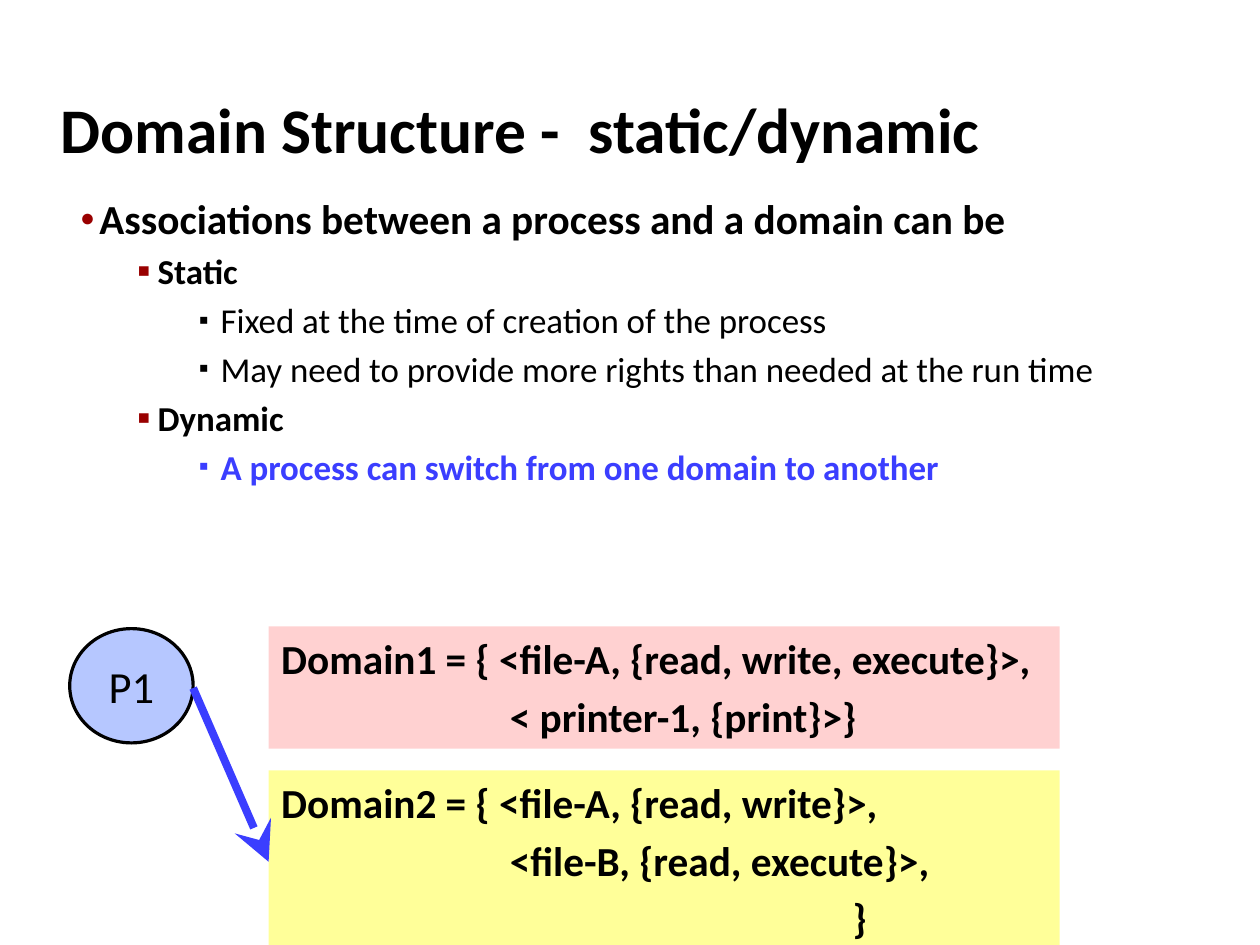
from lxml import etree
from pptx import Presentation
from pptx import util as u
from pptx.dml.color import RGBColor
from pptx.enum import shapes, text
from pptx.oxml.ns import qn

FONT = "Calibri"
COLORS = {
    "text": "000000", "accent": "3B3EFF", "bullet": "990000",
    "process": "B6C7FF", "domain1": "FF0000", "domain2": "FFFF00",
}
TITLE = "Domain Structure -  static/dynamic"
# level, text, bold, colour
OUTLINE = [
    (0, "Associations between a process and a domain can be", True, "text"),
    (1, "Static", True, "text"),
    (2, "Fixed at the time of creation of the process", False, "text"),
    (2, "May need to provide more rights than needed at the run time", False, "text"),
    (1, "Dynamic", True, "text"),
    (2, "A process can switch from one domain to another", True, "accent"),
]
# size, left margin, hanging indent, bullet, bullet colour, bullet percent
LEVELS = [
    (26, 0.29, 0.17, "●", "bullet", 60),
    (22, 0.8, 0.18, "▪", "bullet", 110),
    (22, 1.35, 0.19, "▪", "text", 80),
]
# colour, opacity percent, top, height, lines
DOMAINS = [
    ("domain1", 18, 5.48, 1.07, [
        "Domain1 = { <file-A, {read, write, execute}>,",
        "\t\t< printer-1, {print}>}"]),
    ("domain2", 40, 6.74, 1.6, [
        "Domain2 = { <file-A, {read, write}>,",
        "\t\t<file-B, {read, execute}>,",
        "\t\t\t\t\t}"]),
]
DOMAIN_LEFT, DOMAIN_WIDTH, DOMAIN_SIZE = 2.35, 6.92, 26
PROCESS_BOX = (0.61, 5.5, 1.08, 1)
ARROW_START = (1.69, 6.02)


def color(name):
    return RGBColor.from_string(COLORS[name])


def place(shape, *box):
    shape.left, shape.top, shape.width, shape.height = map(u.Inches, box)


def style(paragraph, size, bold=False, color_name="text"):
    font = paragraph.font
    font.name, font.size, font.bold = FONT, u.Pt(size), bold
    font.color.rgb = color(color_name)


def indent(paragraph, margin, hanging):
    properties = paragraph._p.get_or_add_pPr()
    properties.set("marL", str(u.Inches(margin)))
    properties.set("indent", str(-u.Inches(hanging)))
    return properties


def add_bullet(properties, character, color_name, percent):
    bullet_color = etree.SubElement(properties, qn("a:buClr"))
    etree.SubElement(bullet_color, qn("a:srgbClr"), val=COLORS[color_name])
    etree.SubElement(properties, qn("a:buSzPct"), val=str(percent * 1000))
    etree.SubElement(properties, qn("a:buChar"), char=character)


def fill_paragraphs(frame, lines):
    frame.text = "\n".join(lines)
    return frame.paragraphs


def add_title(slide):
    title = slide.shapes.title
    place(title, 0.43, 1.06, 9.15, 0.39)
    frame = title.text_frame
    frame.text = TITLE
    frame.vertical_anchor = text.MSO_ANCHOR.BOTTOM
    frame.auto_size = text.MSO_AUTO_SIZE.SHAPE_TO_FIT_TEXT
    paragraph = frame.paragraphs[0]
    paragraph.alignment = text.PP_ALIGN.LEFT
    paragraph.line_spacing = 0.42
    indent(paragraph, 0.14, 0.14)
    style(paragraph, 40, True)


def add_outline(slide):
    body = slide.placeholders[1]
    place(body, 0.48, 1.64, 9.52, 2.76)
    frame = body.text_frame
    frame.auto_size = text.MSO_AUTO_SIZE.SHAPE_TO_FIT_TEXT
    paragraphs = fill_paragraphs(frame, [row[1] for row in OUTLINE])
    for paragraph, (level, _, bold, color_name) in zip(paragraphs, OUTLINE):
        size, margin, hanging, *bullet = LEVELS[level]
        if color_name == "accent":
            bullet[1] = color_name
        paragraph.level = level
        paragraph.space_before = u.Pt(size * 0.2)
        add_bullet(indent(paragraph, margin, hanging), *bullet)
        style(paragraph, size, bold, color_name)


def add_domain(slide, color_name, opacity, top, height, lines):
    box = slide.shapes.add_shape(
        shapes.MSO_SHAPE.RECTANGLE,
        *map(u.Inches, (DOMAIN_LEFT, top, DOMAIN_WIDTH, height)))
    box.shadow.inherit = False
    box.line.fill.background()
    box.fill.solid()
    box.fill.fore_color.rgb = color(color_name)
    fill_color = box._element.spPr.find(qn("a:solidFill"))[0]
    etree.SubElement(fill_color, qn("a:alpha"), val=str(opacity * 1000))
    frame = box.text_frame
    frame.word_wrap = True
    frame.auto_size = text.MSO_AUTO_SIZE.SHAPE_TO_FIT_TEXT
    frame.vertical_anchor = text.MSO_ANCHOR.TOP
    frame.margin_left = frame.margin_right = u.Inches(0.11)
    frame.margin_top = frame.margin_bottom = u.Inches(0.06)
    for paragraph in fill_paragraphs(frame, lines):
        paragraph.alignment = text.PP_ALIGN.LEFT
        paragraph.space_before = u.Pt(DOMAIN_SIZE * 0.2)
        paragraph._p.get_or_add_pPr().set("defTabSz", str(u.Inches(1)))
        style(paragraph, DOMAIN_SIZE, True)
    return box


def add_process(slide):
    process = slide.shapes.add_shape(
        shapes.MSO_SHAPE.OVAL, *map(u.Inches, PROCESS_BOX))
    process.shadow.inherit = False
    process.fill.solid()
    process.fill.fore_color.rgb = color("process")
    process.line.color.rgb = color("text")
    process.line.width = u.Pt(2)
    frame = process.text_frame
    frame.text = "P1"
    frame.vertical_anchor = text.MSO_ANCHOR.MIDDLE
    frame.paragraphs[0].alignment = text.PP_ALIGN.CENTER
    style(frame.paragraphs[0], 28)


def add_switch_arrow(slide, domain):
    start = tuple(map(u.Inches, ARROW_START))
    arrow = slide.shapes.add_connector(
        shapes.MSO_CONNECTOR.STRAIGHT, *start, *start)
    arrow.end_connect(domain, 1)
    arrow.line.color.rgb = color("accent")
    arrow.line.width = u.Pt(5)
    etree.SubElement(arrow.line._get_or_add_ln(), qn("a:tailEnd"),
                     type="stealth", w="lg", len="lg")
    etree.SubElement(arrow._element.spPr, qn("a:effectLst"))


def main():
    presentation = Presentation()
    # 28 by 21 cm, which is 11.02 by 8.27 inches
    presentation.slide_width = u.Cm(28)
    presentation.slide_height = u.Cm(21)
    slide = presentation.slides.add_slide(presentation.slide_layouts[1])
    add_title(slide)
    add_outline(slide)
    domains = [add_domain(slide, *domain) for domain in DOMAINS]
    add_process(slide)
    add_switch_arrow(slide, domains[1])
    presentation.save("out.pptx")


if __name__ == "__main__":
    main()
